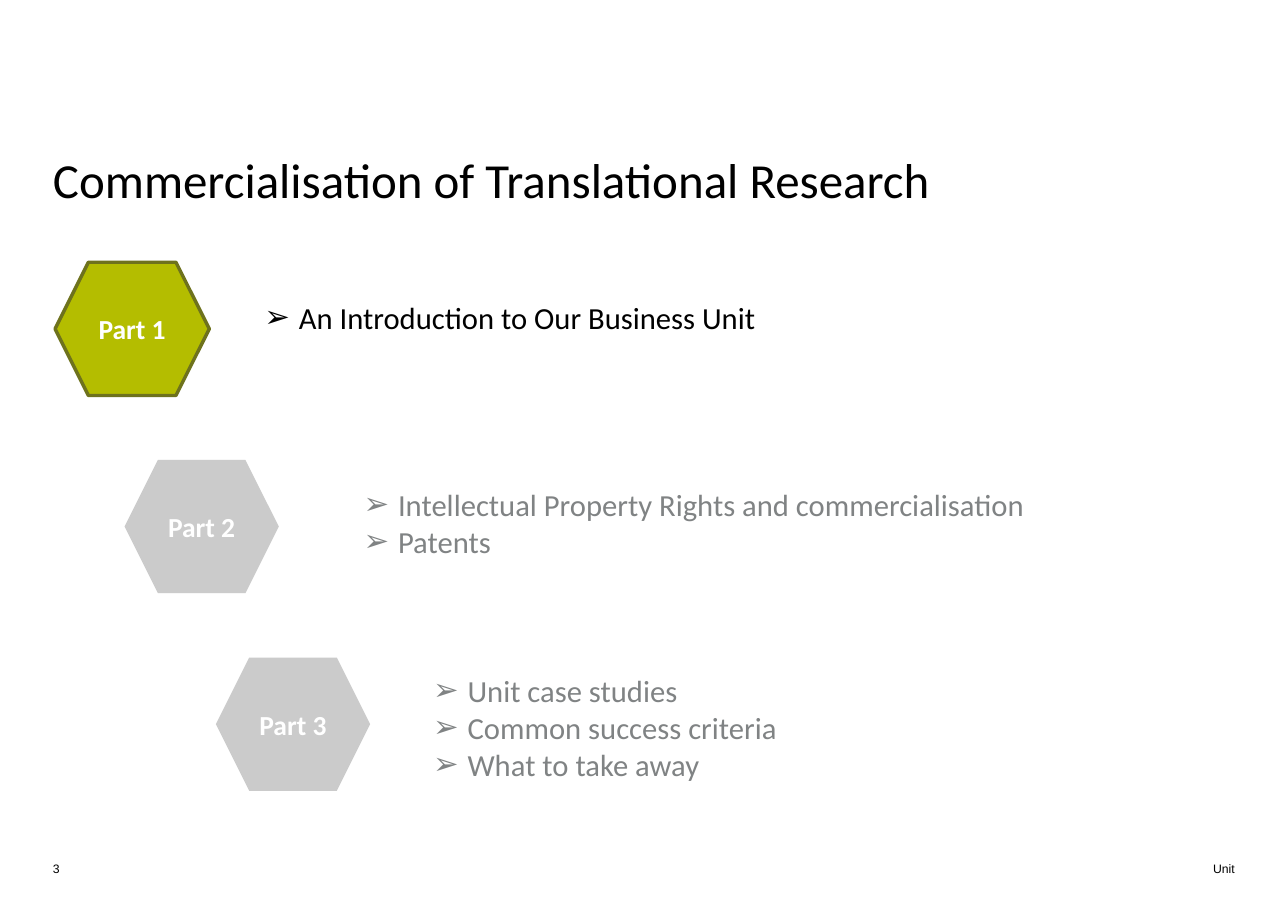
from lxml import etree
from pptx import Presentation
from pptx.dml.color import RGBColor
from pptx.enum import shapes, text
from pptx.oxml import ns
from pptx.util import Pt

BLACK = RGBColor(0x00, 0x00, 0x00)
WHITE = RGBColor(0xFF, 0xFF, 0xFF)
LIME = RGBColor(0xB4, 0xBD, 0x00)
OLIVE = RGBColor(0x6E, 0x72, 0x1D)
PALE_GREY = RGBColor(0xA6, 0xA6, 0xA6)
TEXT_GREY = RGBColor(0x80, 0x83, 0x84)

HEXAGON_TOP, HEXAGON_STEP = 171.4, 129.2
TOPIC_INDENT = 22.5
TOPIC_LINE = 24

PARTS = [
    ("Part 1", 36, 165.6, 191.5, ["An Introduction to Our Business Unit"]),
    ("Part 2", 81.4, 230.4, 313.9,
     ["Intellectual Property Rights and commercialisation", "Patents"]),
    ("Part 3", 141.1, 275.8, 435.6,
     ["Unit case studies", "Common success criteria", "What to take away"]),
]


def place(shape, left, top, width, height):
    shape.left, shape.top = Pt(left), Pt(top)
    shape.width, shape.height = Pt(width), Pt(height)


def format_runs(frame, font_name, size, color, bold=False):
    for paragraph in frame.paragraphs:
        for run in paragraph.runs:
            run.font.name = font_name
            run.font.size = Pt(size)
            run.font.bold = bold
            run.font.color.rgb = color


def set_frame(frame, anchor, margin_x=0, margin_y=0):
    frame.word_wrap = True
    frame.auto_size = text.MSO_AUTO_SIZE.NONE
    frame.vertical_anchor = anchor
    frame.margin_left = frame.margin_right = Pt(margin_x)
    frame.margin_top = frame.margin_bottom = Pt(margin_y)


def add_arrow_bullet(paragraph):
    properties = paragraph._p.get_or_add_pPr()
    properties.set("marL", str(Pt(TOPIC_INDENT)))
    properties.set("indent", str(-Pt(TOPIC_INDENT)))
    etree.SubElement(properties, ns.qn("a:buFont"), typeface="Arial")
    etree.SubElement(properties, ns.qn("a:buChar"), char="➢")


def fill_title(title):
    place(title, 34.6, 102.2, 748.8, 68.4)
    frame = title.text_frame
    frame.text = "Commercialisation of Translational Research"
    set_frame(frame, text.MSO_ANCHOR.TOP)
    frame.paragraphs[0].alignment = text.PP_ALIGN.LEFT
    frame.paragraphs[0].line_spacing = 0.9
    format_runs(frame, "Calibri", 32, BLACK)


def add_part(slide, label, left, top, current):
    part = slide.shapes.add_shape(
        shapes.MSO_SHAPE.HEXAGON, Pt(left), Pt(top), Pt(100.8), Pt(87.1))
    part.shadow.inherit = False
    part.fill.solid()
    if current:
        part.fill.fore_color.rgb = LIME
        part.line.color.rgb = OLIVE
        part.line.width = Pt(2.25)
    else:
        part.fill.fore_color.rgb = PALE_GREY
        fill_color = part._element.spPr.find(".//" + ns.qn("a:srgbClr"))
        etree.SubElement(fill_color, ns.qn("a:alpha"), val="58000")
        part.line.fill.background()
    part.text_frame.text = label
    set_frame(part.text_frame, text.MSO_ANCHOR.MIDDLE, 7.2, 3.6)
    part.text_frame.paragraphs[0].alignment = text.PP_ALIGN.CENTER
    format_runs(part.text_frame, "Calibri", 18, WHITE, bold=True)


def fill_topics(body, topics, left, top, color):
    place(body, left, top, 508.3, TOPIC_LINE * len(topics) + 7.5)
    frame = body.text_frame
    frame.text = "\n".join(topics)
    set_frame(frame, text.MSO_ANCHOR.TOP, 7.2, 3.6)
    for paragraph in frame.paragraphs:
        paragraph.alignment = text.PP_ALIGN.LEFT
        paragraph.space_before = paragraph.space_after = Pt(0)
        paragraph.line_spacing = 1.0
        add_arrow_bullet(paragraph)
    format_runs(frame, "Calibri", 20, color)


def add_footer(slide, wording, left, width):
    footer = slide.shapes.add_textbox(Pt(left), Pt(559.4), Pt(width), Pt(16.6))
    footer.text_frame.text = wording
    set_frame(footer.text_frame, text.MSO_ANCHOR.MIDDLE)
    format_runs(footer.text_frame, "Arial", 8, BLACK)


def main():
    deck = Presentation()
    deck.slide_width, deck.slide_height = Pt(841.68), Pt(595.44)
    slide = deck.slides.add_slide(deck.slide_layouts.get_by_name("Comparison"))
    fill_title(slide.shapes.title)
    bodies = list(slide.placeholders)[1:]
    for row, (label, part_left, left, top, topics) in enumerate(PARTS):
        current = row == 0
        add_part(slide, label, part_left, HEXAGON_TOP + row * HEXAGON_STEP, current)
        fill_topics(bodies[row], topics, left, top, BLACK if current else TEXT_GREY)
    for unused in bodies[len(PARTS):]:
        unused._element.getparent().remove(unused._element)
    add_footer(slide, "3", 34.6, 97.2)
    add_footer(slide, "Unit", 792.7, 36.7)
    deck.save("out.pptx")


if __name__ == "__main__":
    main()
